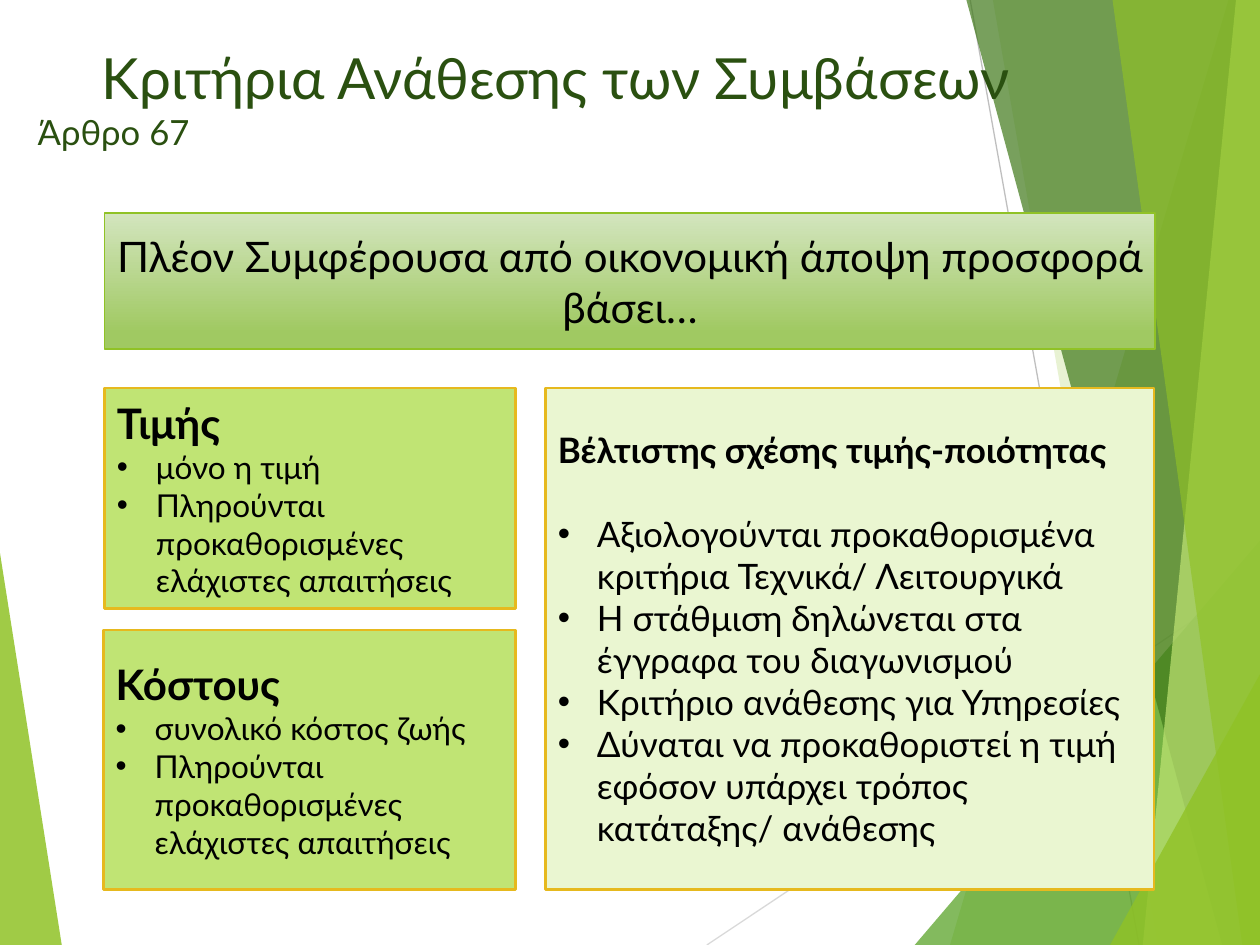
import pptx
import pptx.dml.color
import pptx.enum.shapes
import pptx.enum.text
import pptx.oxml.ns
import pptx.util
from lxml import etree

Inches = pptx.util.Inches
Pt = pptx.util.Pt
RGBColor = pptx.dml.color.RGBColor
Align = pptx.enum.text.PP_ALIGN
Anchor = pptx.enum.text.MSO_ANCHOR
qn = pptx.oxml.ns.qn

FONT = "Lato"
BLACK = RGBColor(0x00, 0x00, 0x00)
DARK_GREEN = RGBColor(0x2A, 0x50, 0x10)
FOREST = RGBColor(0x3F, 0x78, 0x19)
GRASS = RGBColor(0x54, 0xA0, 0x21)
GREEN = RGBColor(0x90, 0xC2, 0x26)
LIME = RGBColor(0xC0, 0xE4, 0x74)
PALE_LIME = RGBColor(0xEA, 0xF6, 0xD1)
GRADIENT_TOP = RGBColor(0xD3, 0xE5, 0xBE)
GRADIENT_END = RGBColor(0xA0, 0xC9, 0x62)
GOLD = RGBColor(0xE6, 0xB9, 0x1E)
LIGHT_GREY = RGBColor(0xD9, 0xD9, 0xD9)
GREY = RGBColor(0xBF, 0xBF, 0xBF)


def write(para, text, size=18, color=BLACK, bold=False, align=Align.LEFT,
          after=0, left=0, first=0, bullet=False):
    """Fill a paragraph with one formatted span."""
    span = para.add_run()
    span.text = text
    span.font.name = FONT
    span.font.size = Pt(size)
    span.font.bold = bold
    span.font.color.rgb = color
    para.alignment = align
    para.space_after = Pt(after)
    properties = para._p.get_or_add_pPr()
    properties.set("marL", str(Inches(left)))
    properties.set("indent", str(Inches(first)))
    if bullet:
        etree.SubElement(properties, qn("a:buFont"), typeface="Arial")
        etree.SubElement(properties, qn("a:buChar"), char="•")


class Page:
    """The current slide and its drawing style."""

    def __init__(self, deck):
        self.shapes = deck.slides.add_slide(deck.slide_layouts[6]).shapes

    def facet(self, points, color, opacity):
        corners = [(Inches(x), Inches(y)) for x, y in points]
        builder = self.shapes.build_freeform(*corners[0])
        builder.add_line_segments(corners[1:], close=True)
        shape = builder.convert_to_shape()
        shape.shadow.inherit = False
        shape.line.fill.background()
        shape.fill.solid()
        shape.fill.fore_color.rgb = color
        tint = shape._element.spPr.find(qn("a:solidFill"))[0]
        etree.SubElement(tint, qn("a:alpha"), val=str(opacity * 1000))

    def line(self, start, end, color):
        straight = pptx.enum.shapes.MSO_CONNECTOR.STRAIGHT
        ends = [Inches(value) for value in (*start, *end)]
        connector = self.shapes.add_connector(straight, *ends)
        connector.line.color.rgb = color
        connector.line.width = Pt(0.75)
        etree.SubElement(connector._element.spPr, qn("a:effectLst"))

    def text(self, area, lines):
        box = self.shapes.add_textbox(*map(Inches, area))
        box.text_frame.word_wrap = True
        self.fill_frame(box.text_frame, lines)

    def panel(self, area, lines, fill=None, border=GOLD, width=1.5):
        """A bordered rectangle; without a fill colour it gets the gradient."""
        kind = pptx.enum.shapes.MSO_SHAPE.RECTANGLE
        shape = self.shapes.add_shape(kind, *map(Inches, area))
        shape.shadow.inherit = False
        shape.line.color.rgb = border
        shape.line.width = Pt(width)
        if fill is None:
            shape.fill.gradient()
            shape.fill.gradient_angle = 270
            stops = ((0, GRADIENT_TOP), (0.88, GRADIENT_END))
            for stop, (position, color) in zip(shape.fill.gradient_stops, stops):
                stop.position = position
                stop.color.rgb = color
        else:
            shape.fill.solid()
            shape.fill.fore_color.rgb = fill
        shape.text_frame.word_wrap = True
        shape.text_frame.vertical_anchor = Anchor.MIDDLE
        self.fill_frame(shape.text_frame, lines)

    def list_panel(self, area, heading, items, fill, heading_size=24, size=18, gap=0):
        lines = [(heading, dict(size=heading_size, bold=True, after=gap))]
        style = dict(size=size, left=0.31, first=-0.31, bullet=True)
        self.panel(area, lines + [(item, style) for item in items], fill)

    def fill_frame(self, frame, lines):
        for index, (text, style) in enumerate(lines):
            para = frame.add_paragraph() if index else frame.paragraphs[0]
            write(para, text, **style)


def main():
    deck = pptx.Presentation()
    deck.slide_width, deck.slide_height = Inches(10), Inches(7.5)
    page = Page(deck)

    # Background facets and thin lines
    page.facet([(0, 4.39), (0.49, 7.5), (0, 7.5)], GREEN, 85)
    page.line((5.61, 7.5), (10, 4.57), LIGHT_GREY)
    page.line((7.7, 0), (9.04, 7.5), GREY)
    # Each right-hand facet: top left x, bottom left x, top y, colour, opacity
    facets = [
        (9.75, 7.54, 0, GREEN, 30),
        (7.88, 9.19, 0, GREEN, 20),
        (10, 7.26, 4.29, GRASS, 72),
        (7.67, 9.7, 0, FOREST, 70),
        (9.81, 9.07, 0, LIME, 70),
        (8.83, 9.86, 0, GREEN, 65),
        (10, 8.81, 5.35, GREEN, 80),
    ]
    for top_x, bottom_x, top, color, opacity in facets:
        corners = [(top_x, top), (bottom_x, 7.5), (10, 7.5)]
        if top_x < 10:
            corners.append((10, top))
        page.facet(corners, color, opacity)

    # Title
    page.text((0.2, 0.29, 8.39, 1.09), [
        ("Κριτήρια Ανάθεσης των Συμβάσεων", dict(size=32.4, color=DARK_GREEN, left=0.51)),
        ("Άρθρο 67", dict(size=19.8, color=DARK_GREEN)),
    ])

    # Banner
    page.panel((0.83, 1.69, 8.34, 1.08), [
        ("Πλέον Συμφέρουσα από οικονομική άποψη προσφορά βάσει…",
         dict(size=24, align=Align.CENTER)),
    ], border=GREEN, width=1)

    # Award criteria
    requirements = "Πληρούνται προκαθορισμένες ελάχιστες απαιτήσεις"
    page.list_panel((0.83, 3.08, 3.26, 1.75), "Τιμής",
                    ["μόνο η τιμή", requirements], LIME)
    page.list_panel((4.33, 3.08, 4.83, 3.98), "Βέλτιστης σχέσης τιμής-ποιότητας", [
        "Αξιολογούνται προκαθορισμένα κριτήρια Τεχνικά/ Λειτουργικά",
        "Η στάθμιση δηλώνεται στα έγγραφα του διαγωνισμού",
        "Κριτήριο ανάθεσης για Υπηρεσίες",
        "Δύναται να προκαθοριστεί η τιμή εφόσον υπάρχει τρόπος κατάταξης/ ανάθεσης",
    ], PALE_LIME, heading_size=20, size=20, gap=24)
    page.list_panel((0.82, 5, 3.27, 2.06), "Κόστους",
                    ["συνολικό κόστος ζωής", requirements], LIME)

    deck.save("out.pptx")


if __name__ == "__main__":
    main()
